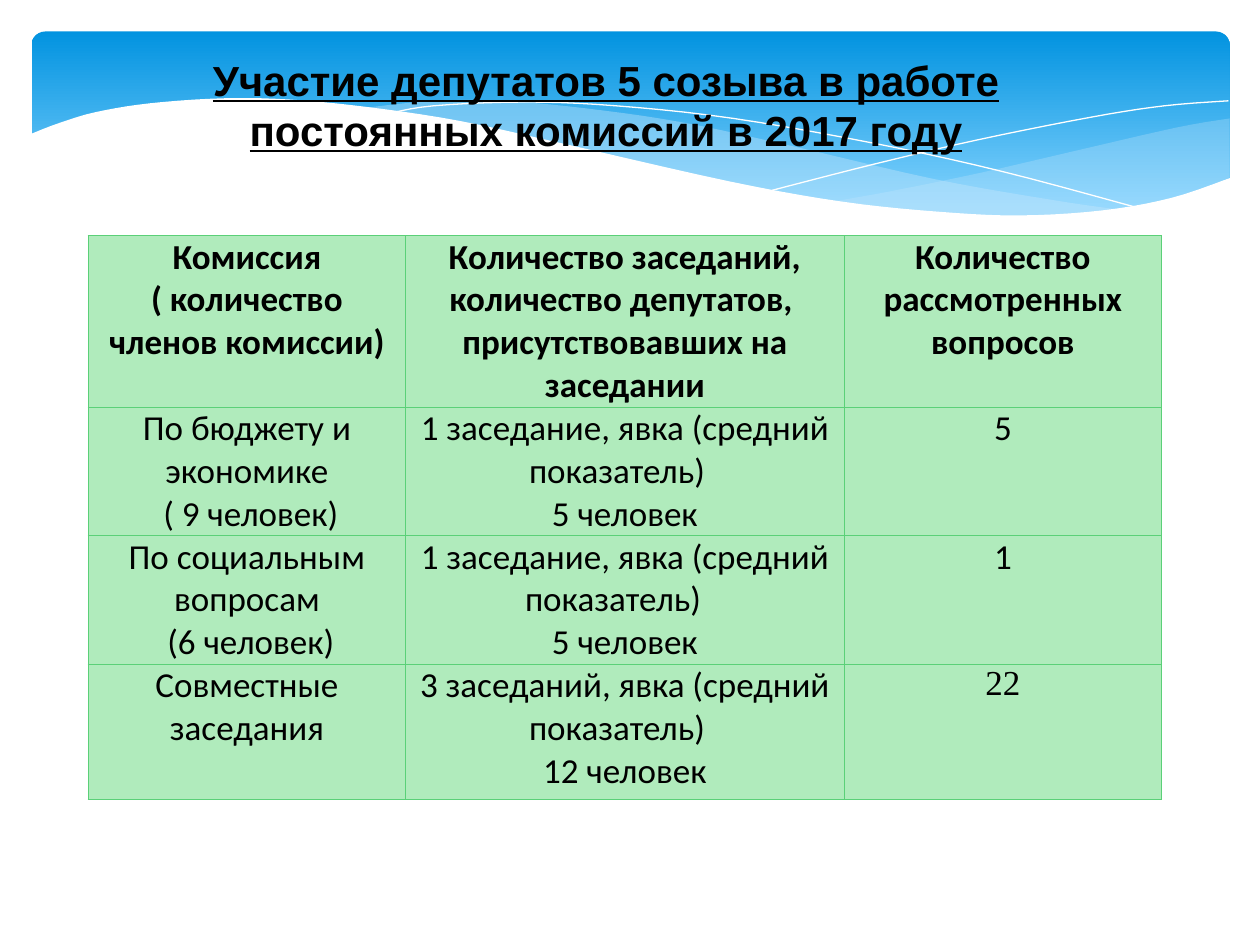
import pptx
import pptx.dml.color
import pptx.enum.shapes
import pptx.enum.text
import pptx.oxml
import pptx.oxml.ns
import pptx.util
from pptx.util import Inches, Pt

TITLE = ["Участие депутатов 5 созыва в работе", "постоянных комиссий в 2017 году"]
ROWS = [
    [["Комиссия", "( количество членов комиссии)"],
     ["Количество заседаний, количество депутатов, ", "присутствовавших на заседании"],
     ["Количество рассмотренных вопросов"]],
    [["По бюджету и экономике", " ( 9 человек)"],
     ["1 заседание, явка (средний показатель)  ", "5 человек"],
     ["5"]],
    [["По социальным вопросам", " (6 человек)"],
     ["1 заседание, явка (средний показатель)   ", "5 человек"],
     ["1"]],
    [["Совместные заседания"],
     ["3 заседаний, явка (средний показатель)  ", "12 человек"],
     ["22"]],
]
COLUMN_WIDTHS = [2.52, 3.48, 2.52]
ROW_HEIGHTS = [1.33, 1, 1, 1.07]
CELL_FILL, CELL_BORDER = "B0EBBC", "5BD078"

# Each wave is a chain of smooth curves given by knots; curves are joined by straight lines.
PALE, WHITE = "C6E7FC", "FFFFFF"
WAVES = [
    {"fill": PALE, "opacity": 29, "curves": [
        [(9.76, 0.94), (9.35, 1.01), (8.61, 1.18), (7.79, 1.37), (7.06, 1.52), (6.61, 1.6)],
        [(6.61, 1.6), (7.19, 1.67), (7.81, 1.72), (8.35, 1.72), (8.89, 1.66), (9.35, 1.56),
         (9.76, 1.41)]]},
    {"fill": PALE, "opacity": 40, "curves": [
        [(8.93, 1.67), (8.37, 1.59), (7.41, 1.42), (6.29, 1.16), (5.41, 0.97), (4.65, 0.86),
         (3.99, 0.8), (3.44, 0.8), (2.86, 0.86)],
        [(2.86, 0.86), (3.62, 0.97), (4.49, 1.16), (5.66, 1.43), (6.5, 1.58), (7.22, 1.68),
         (7.85, 1.72), (8.38, 1.72), (8.93, 1.67)]]},
    {"line": WHITE, "curves": [
        [(3.09, 0.9), (3.44, 0.84), (4.16, 0.81), (4.89, 0.84), (5.82, 0.94), (6.95, 1.14),
         (7.95, 1.36), (9.07, 1.66)]]},
    {"line": WHITE, "curves": [
        [(6.13, 1.51), (6.95, 1.3), (7.76, 1.11), (8.66, 0.93), (9.24, 0.84), (9.75, 0.8)]]},
    {"fill": WHITE, "opacity": 100, "curves": [
        [(9.77, 1.41), (9.3, 1.57), (8.75, 1.67), (8.09, 1.71), (7.44, 1.68), (6.68, 1.6),
         (5.79, 1.44), (4.47, 1.14), (3.65, 0.96), (2.92, 0.85), (2.3, 0.79), (1.77, 0.78),
         (1.19, 0.82), (0.76, 0.89), (0.46, 0.98), (0.23, 1.07)],
        [(0.23, 2.24), (9.77, 2.24)]]},
]


def rgb(hex_color):
    return pptx.dml.color.RGBColor.from_string(hex_color)


def smooth(knots, steps=5):
    """Catmull-Rom curve through the knots."""
    padded = [knots[0], *knots, knots[-1]]
    points = [knots[0]]
    for a, b, c, d in zip(padded, padded[1:], padded[2:], padded[3:]):
        for step in range(1, steps + 1):
            t = step / steps
            points.append(tuple(
                (2 * q + (r - p) * t + (2 * p - 5 * q + 4 * r - s) * t**2
                 + (3 * q - p - 3 * r + s) * t**3) / 2
                for p, q, r, s in zip(a, b, c, d)))
    return points


def add_wave(shapes, wave):
    points = [(Inches(x), Inches(y)) for curve in wave["curves"] for x, y in smooth(curve)]
    builder = shapes.build_freeform(*points[0])
    builder.add_line_segments(points[1:], close="fill" in wave)
    shape = builder.convert_to_shape()
    shape.shadow.inherit = False
    if "fill" in wave:
        shape.fill.solid()
        shape.fill.fore_color.rgb = rgb(wave["fill"])
        shape.line.fill.background()
        color = shape.fill._xPr.find(".//" + pptx.oxml.ns.qn("a:srgbClr"))
        if wave["opacity"] < 100:
            color.append(pptx.oxml.parse_xml(
                f'<a:alpha {pptx.oxml.ns.nsdecls("a")} val="{wave["opacity"] * 1000}"/>'))
    else:
        shape.fill.background()
        shape.line.color.rgb = rgb(wave["line"])
        shape.line.width = Pt(0)


def write_centered(frame, lines, color="000000", **font_format):
    for number, line in enumerate(lines):
        paragraph = frame.paragraphs[0] if number == 0 else frame.add_paragraph()
        paragraph.alignment = pptx.enum.text.PP_ALIGN.CENTER
        run = paragraph.add_run()
        run.text = line
        run.font.color.rgb = rgb(color)
        for key, value in font_format.items():
            setattr(run.font, key, value)


def add_borders(cell):
    properties = cell._tc.get_or_add_tcPr()
    for side in "LRTB":
        properties.append(pptx.oxml.parse_xml(
            f'<a:ln{side} {pptx.oxml.ns.nsdecls("a")} w="{Pt(0.75)}"><a:solidFill>'
            f'<a:srgbClr val="{CELL_BORDER}"/></a:solidFill></a:ln{side}>'))


def add_banner(shapes):
    banner = shapes.add_shape(pptx.enum.shapes.MSO_SHAPE.ROUNDED_RECTANGLE,
                              Inches(0.25), Inches(0.25), Inches(9.51), Inches(1.56))
    banner.adjustments[0] = 0.07
    banner.shadow.inherit = False
    banner.line.fill.background()
    banner.fill.gradient()
    banner.fill.gradient_angle = 270
    for stop, (position, color) in zip(banner.fill.gradient_stops,
                                       [(0, "0293E0"), (0.9, "83D3FE")]):
        stop.position = position
        stop.color.rgb = rgb(color)
    for wave in WAVES:
        add_wave(shapes, wave)


def add_commission_table(shapes):
    table = shapes.add_table(len(ROWS), len(COLUMN_WIDTHS), Inches(0.7), Inches(1.87),
                             Inches(sum(COLUMN_WIDTHS)), Inches(sum(ROW_HEIGHTS))).table
    for column, width in zip(table.columns, COLUMN_WIDTHS):
        column.width = Inches(width)
    margins = {"margin_left": 0.07, "margin_right": 0.07, "margin_top": 0, "margin_bottom": 0}
    for r, (row, height) in enumerate(zip(ROWS, ROW_HEIGHTS)):
        table.rows[r].height = Inches(height)
        for c, lines in enumerate(row):
            cell = table.cell(r, c)
            for key, value in margins.items():
                setattr(cell, key, Inches(value))
            add_borders(cell)
            cell.fill.solid()
            cell.fill.fore_color.rgb = rgb(CELL_FILL)
            font = "Times New Roman" if lines == ["22"] else "Calibri"
            write_centered(cell.text_frame, lines, name=font, size=Pt(20), bold=r == 0)


def main():
    deck = pptx.Presentation()
    deck.slide_width, deck.slide_height = Inches(10), Inches(7.5)
    shapes = deck.slides.add_slide(deck.slide_layouts[6]).shapes
    add_banner(shapes)
    add_commission_table(shapes)
    title = shapes.add_textbox(Inches(-0.02), Inches(0.38), Inches(9.66), Inches(1.31))
    title.text_frame.word_wrap = True
    write_centered(title.text_frame, TITLE, name="Arial", size=Pt(24), bold=True, underline=True)
    deck.save("out.pptx")


if __name__ == "__main__":
    main()
